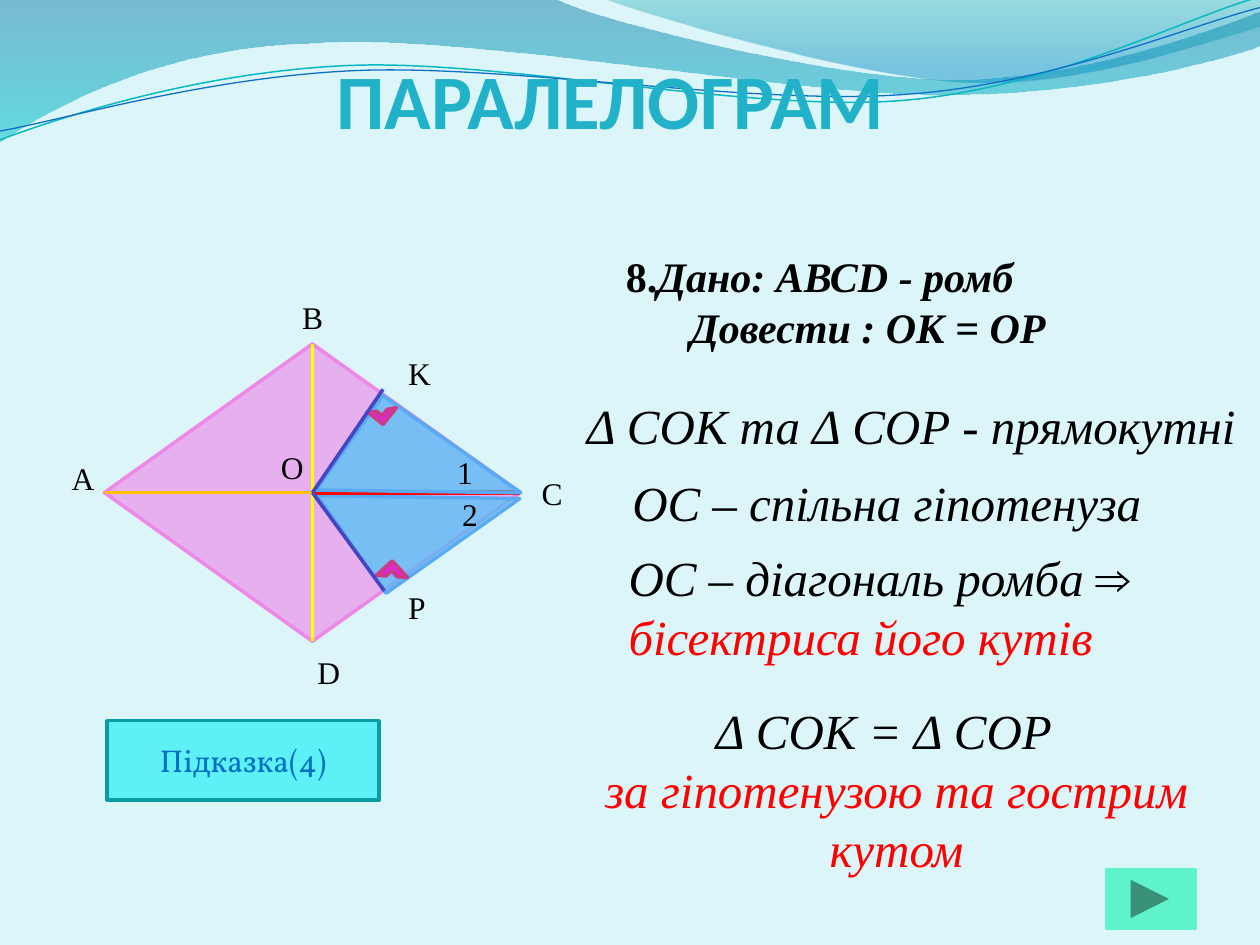
from math import cos, radians, sin

from lxml import etree
from pptx import Presentation
from pptx.dml.color import RGBColor
from pptx.enum.shapes import MSO_CONNECTOR, MSO_SHAPE
from pptx.enum.text import MSO_ANCHOR, PP_ALIGN
from pptx.oxml.ns import qn
from pptx.util import Inches, Pt

STRAIGHT = MSO_CONNECTOR.STRAIGHT
LEFT, CENTER = PP_ALIGN.LEFT, PP_ALIGN.CENTER
TOP, MIDDLE, BOTTOM = MSO_ANCHOR.TOP, MSO_ANCHOR.MIDDLE, MSO_ANCHOR.BOTTOM
TOP_SITE, LEFT_SITE, BOTTOM_SITE, RIGHT_SITE = range(4)
THEME = dict(
    serif="Times New Roman", title_font="Calibri", button_font="Vollkorn",
    title=44, proof=28, given=24, label=18,
    bg="DBF5F9", title_color="21B2C9", ink="000000", accent="FF0000",
    rhombus="ED87E8", triangle="20C9F8", triangle_line="59AAF2",
    mark="DE26D5", mark_line="CB3B86", height="4545C1",
    hint="5EF0F7", hint_line="089CA3", hint_text="0070C0", next="5FF3CA",
)

# Content
TITLE = "ПАРАЛЕЛОГРАМ"
HINT = "Підказка(4)"
GIVEN = [  # indent, runs of (text, italic)
    (0.16, [("8.", False), ("Дано: АВСD - ромб", True)]),
    (0.67, [("Довести : ОК = ОР", True)]),
]
PROOF = [  # box, alignment, lines of (text, colour, right margin)
    ((4.92, 3.7, 4.97, 0.57), LEFT, [("ОС – спільна гіпотенуза", "ink", 0)]),
    ((4.56, 3.09, 5.44, 0.57), LEFT, [("Δ СОК та Δ СОР - прямокутні", "ink", 0)]),
    ((4.89, 4.3, 4.97, 1.04), LEFT, [("ОС – діагональ ромба ⇒", "ink", 0),
                                     ("бісектриса його кутів", "accent", 0)]),
    ((4.38, 5.51, 5.47, 1.51), CENTER, [("Δ СОК = Δ СОР", "ink", 0.2),
                                        ("за гіпотенузою та гострим кутом", "accent", 0)]),
]
LABELS = {"A": (0.47, 3.59), "B": (2.3, 2.32), "K": (3.14, 2.76), "C": (4.2, 3.71),
          "P": (3.14, 4.62), "D": (2.42, 5.13), "O": (2.13, 3.51)}
ANGLES = {"2": (3.57, 3.88), "1": (3.53, 3.55)}

# Waves: each step is a point (2 numbers) or a Bezier curve (6 numbers)
FILLED_WAVES = [
    ([(0, 0), (4.4, -0.01), (4.76, 0.17, 6.64, 0.63, 7.58, 0.63),
      (8.53, 0.63, 9.58, 0.26, 10, 0.09), (10.01, 0.36),
      (9.83, 0.44, 8.7, 0.76, 7.46, 0.75), (6.22, 0.75, 3.82, 0.28, 2.57, 0.34),
      (1.29, 0.36, 0.46, 0.83, -0.01, 1.13)],
     [(0, "0074A1", 45), (1, "00C6CF", 55)]),
    ([(4.79, -0.01), (5.09, 0.11, 6.82, 0.62, 7.69, 0.65),
      (8.56, 0.69, 9.61, 0.32, 10, 0.21), (10, 0)],
     [(0, "00A1A9", 30), (0.8, "008BBF", 45)]),
]
TILT, PIVOT = 357.3, (4.99, 0.58)
LINE_WAVES = [
    ([(0, 1.11), (0.48, 0.93, 1.58, 0.57, 2.77, 0.52), (3.95, 0.47, 5.93, 0.89, 7.13, 0.8),
      (8.33, 0.71, 9.38, 0.15, 9.98, -0.02)], "0AB8BF", 0.85),
    ([(0, 1.04), (0.47, 0.96, 1.64, 0.61, 2.83, 0.56), (4.03, 0.51, 5.97, 0.84, 7.17, 0.75),
      (8.36, 0.67, 9.41, 0.21, 10, 0.06)], "0F6FC6", 0.75),
]

prs = Presentation()
prs.slide_width, prs.slide_height = Inches(10), Inches(7.5)
s = prs.slides.add_slide(prs.slide_layouts[5])


def rgb(name):
    return RGBColor.from_string(THEME.get(name, name))


def set_alpha(color, percent):
    etree.SubElement(color, qn("a:alpha")).set("val", str(percent * 1000))


def style(sp, fill=None, line=None, width=2, alpha=None):
    sp.shadow.inherit = False
    if fill:
        sp.fill.solid()
        sp.fill.fore_color.rgb = rgb(fill)
        if alpha:
            set_alpha(next(sp.element.spPr.iter(qn("a:srgbClr"))), alpha)
    else:
        sp.fill.background()
    if line:
        sp.line.color.rgb = rgb(line)
        sp.line.width = Pt(width)
    else:
        sp.line.fill.background()


def shape(kind, box, rotation=0, **look):
    sp = s.shapes.add_shape(kind, *map(Inches, box))
    sp.rotation = rotation
    style(sp, **look)
    return sp


def turn(x, y, angle):
    dx, dy, a = x - PIVOT[0], y - PIVOT[1], radians(angle)
    return PIVOT[0] + dx * cos(a) - dy * sin(a), PIVOT[1] + dx * sin(a) + dy * cos(a)


def wave(steps, closed, rotation=0):
    # The outline is drawn level, then the whole shape is rotated
    steps = [[tuple(map(Inches, turn(*step[i:i + 2], -rotation)))
              for i in range(0, len(step), 2)] for step in steps]
    fb = s.shapes.build_freeform(*steps[0][0])
    fb.add_line_segments([step[-1] for step in steps[1:]], close=closed)
    sp = fb.convert_to_shape()
    segments = list(sp.element.spPr.iter(qn("a:lnTo")))
    for segment, step in zip(segments, steps[1:]):
        if len(step) == 3:
            curve = etree.Element(qn("a:cubicBezTo"))
            for x, y in step:
                pt = etree.SubElement(curve, qn("a:pt"))
                pt.set("x", str(x - sp.left))
                pt.set("y", str(y - sp.top))
            segment.getparent().replace(segment, curve)
    sp.rotation = rotation
    return sp


def line(start, end, color, width=2, sites=(None, None)):
    ln = s.shapes.add_connector(STRAIGHT, *map(Inches, start + end))
    if sites[0] is not None:
        ln.begin_connect(rhombus, sites[0])
    if sites[1] is not None:
        ln.end_connect(rhombus, sites[1])
    ln.line.color.rgb = rgb(color)
    ln.line.width = Pt(width)
    etree.SubElement(ln.element.spPr, qn("a:effectLst"))


def set_font(font, face, size, color, bold=False, italic=False):
    font.name, font.size, font.bold, font.italic = THEME[face], Pt(THEME[size]), bold, italic
    font.color.rgb = rgb(color)


def text_box(box):
    tf = s.shapes.add_textbox(*map(Inches, box)).text_frame
    tf.word_wrap, tf.vertical_anchor = True, TOP
    return tf


def paragraphs(tf, items):
    for i, item in enumerate(items):
        yield (tf.add_paragraph() if i else tf.paragraphs[0]), item


def point_labels(labels):
    for name, corner in labels.items():
        p = text_box(corner + (0.35, 0.4)).paragraphs[0]
        p.text = name
        set_font(p.font, "serif", "label", "ink")


# Background and waves
s.background.fill.solid()
s.background.fill.fore_color.rgb = rgb("bg")
for steps, stops in FILLED_WAVES:
    sp = wave(steps, True)
    style(sp)
    sp.fill.gradient()
    sp.fill.gradient_angle = 270
    for stop, (position, color, _) in zip(sp.fill.gradient_stops, stops):
        stop.position, stop.color.rgb = position, rgb(color)
    for el, (_, _, alpha) in zip(list(sp.element.spPr.iter(qn("a:srgbClr"))), stops):
        set_alpha(el, alpha)
for steps, color, width in LINE_WAVES:
    style(wave(steps, False, TILT), line=color, width=width)

# Given
for p, (indent, runs) in paragraphs(text_box((4.71, 1.94, 4.66, 1.26)), GIVEN):
    p._p.get_or_add_pPr().set("marL", str(Inches(indent)))
    for text, italic in runs:
        r = p.add_run()
        r.text = text
        set_font(r.font, "serif", "given", "ink", True, italic)

# Rhombus and its diagonals
X, Y, W, H = 0.83, 2.73, 3.3, 2.36
O, A, C = (X + W / 2, Y + H / 2), (X, Y + H / 2), (X + W, Y + H / 2)
B, D = (O[0], Y), (O[0], Y + H)
rhombus = shape(MSO_SHAPE.FLOWCHART_DECISION, (X, Y, W, H),
                fill="rhombus", line="rhombus", alpha=62)
line(A, C, "FFC000", sites=(LEFT_SITE, RIGHT_SITE))
line(B, D, "FFFF00", sites=(TOP_SITE, BOTTOM_SITE))
point_labels(LABELS)

# Title, above the waves
title = s.shapes.title
s.shapes._spTree.append(title.element)
title.left, title.top, title.width, title.height = map(Inches, (2.55, 0.36, 4.59, 0.84))
tf = title.text_frame
tf.text, tf.word_wrap, tf.vertical_anchor = TITLE, False, BOTTOM
tf.paragraphs[0].alignment = CENTER
set_font(tf.paragraphs[0].font, "title_font", "title", "title_color", True)

# Hint button
tf = shape(MSO_SHAPE.ACTION_BUTTON_CUSTOM, (0.85, 5.72, 2.16, 0.63),
           fill="hint", line="hint_line").text_frame
tf.text, tf.vertical_anchor = HINT, MIDDLE
tf.paragraphs[0].alignment = CENTER
set_font(tf.paragraphs[0].font, "button_font", "label", "hint_text")

# Proof
for box, align, lines in PROOF:
    for p, (text, color, right) in paragraphs(text_box(box), lines):
        p.text, p.alignment = text, align
        p._p.get_or_add_pPr().set("marR", str(Inches(right)))
        set_font(p.font, "serif", "proof", color, italic=True)

# Right triangles, right-angle marks and heights
triangle = dict(fill="triangle", line="triangle_line", alpha=56)
mark = dict(fill="mark", line="mark_line")
shape(MSO_SHAPE.RIGHT_TRIANGLE, (2.67, 3.47, 1.3, 0.95), 324.7, **triangle)
line(O, C, "accent", 3, sites=(None, RIGHT_SITE))
shape(MSO_SHAPE.HALF_FRAME, (3.02, 4.49, 0.18, 0.17), 47.4, **mark)
shape(MSO_SHAPE.RIGHT_TRIANGLE, (2.86, 3.23, 0.92, 1.34), 125.2, **triangle)
shape(MSO_SHAPE.HALF_FRAME, (2.96, 3.17, 0.15, 0.17), 218.8, **mark)
point_labels(ANGLES)
for foot in [(3.04, 3.09), (3.05, 4.69)]:
    line(O, foot, "height")

# Next button
shape(MSO_SHAPE.ACTION_BUTTON_FORWARD_OR_NEXT, (8.78, 6.9, 0.71, 0.47), fill="next", line="next")

prs.save("out.pptx")
